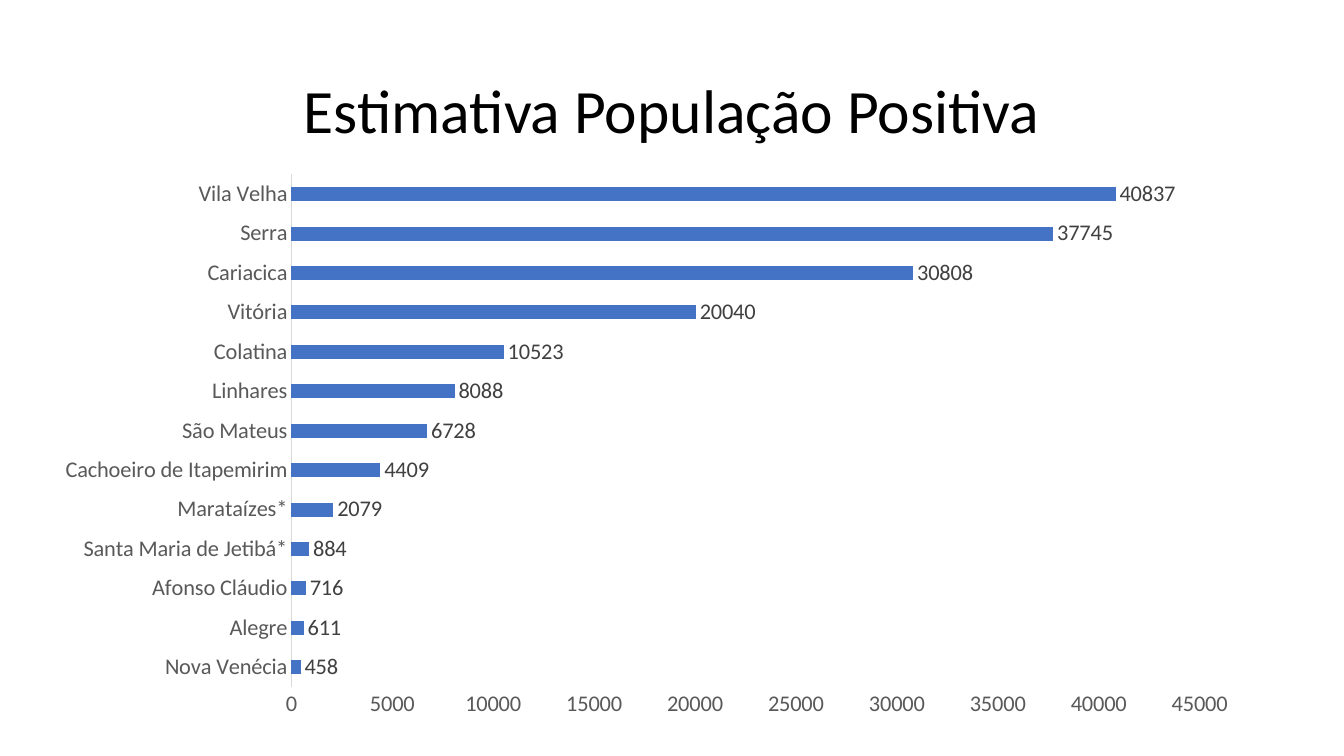
from dataclasses import dataclass

from pptx import Presentation
from pptx import util as u
from pptx.chart import data
from pptx.dml import color
from pptx.enum import chart as ch, text


@dataclass(frozen=True)
class Theme:
    """Colours, font and type sizes of the slide."""
    font: str = "Calibri"
    title: str = "000000"
    bar: str = "4472C4"
    axis: str = "595959"
    label: str = "404040"
    line: str = "D9D9D9"
    title_size: int = 44
    chart_size: int = 16


THEME = Theme()

ESTIMATES = {
    "Nova Venécia": 458,
    "Alegre": 611,
    "Afonso Cláudio": 716,
    "Santa Maria de Jetibá*": 884,
    "Marataízes*": 2079,
    "Cachoeiro de Itapemirim": 4409,
    "São Mateus": 6728,
    "Linhares": 8088,
    "Colatina": 10523,
    "Vitória": 20040,
    "Cariacica": 30808,
    "Serra": 37745,
    "Vila Velha": 40837,
}


def rgb(value):
    """Return a colour from its hex value."""
    return color.RGBColor.from_string(value)


def set_font(font, size, value):
    """Apply the theme font with a size and a colour."""
    font.name = THEME.font
    font.size = u.Pt(size)
    font.bold = False
    font.color.rgb = rgb(value)


def add_title(s, box, title):
    """Fill the title placeholder and place it in the box."""
    sp = s.shapes.title
    sp.left, sp.top, sp.width, sp.height = map(u.Pt, box)
    tf = sp.text_frame
    tf.text = title
    tf.word_wrap = True
    tf.vertical_anchor = text.MSO_ANCHOR.MIDDLE
    p = tf.paragraphs[0]
    p.alignment = text.PP_ALIGN.CENTER
    p.line_spacing = 0.9
    set_font(p.font, THEME.title_size, THEME.title)


def format_axis(axis):
    """Strip gridlines and ticks from an axis and style its labels."""
    axis.has_major_gridlines = False
    axis.major_tick_mark = axis.minor_tick_mark = ch.XL_TICK_MARK.NONE
    set_font(axis.tick_labels.font, THEME.chart_size, THEME.axis)


def add_bars(s, box, estimates):
    """Draw the labelled bar chart of estimates in the box."""
    cd = data.CategoryChartData(number_format="0")
    cd.categories = list(estimates)
    cd.add_series("Series 1", list(estimates.values()))
    chart = s.shapes.add_chart(
        ch.XL_CHART_TYPE.BAR_CLUSTERED, *map(u.Pt, box), cd).chart
    chart.has_title = chart.has_legend = False
    set_font(chart.font, THEME.chart_size, THEME.axis)

    cities, values = chart.category_axis, chart.value_axis
    format_axis(cities)
    format_axis(values)
    cities.format.line.color.rgb = rgb(THEME.line)
    cities.format.line.width = u.Pt(0.75)
    values.format.line.fill.background()
    values.minimum_scale, values.maximum_scale = 0, 45000
    values.major_unit = 5000
    values.tick_labels.number_format = "0"
    values.tick_labels.number_format_is_linked = False

    plot = chart.plots[0]
    plot.gap_width = 182
    plot.vary_by_categories = False
    bars = plot.series[0]
    bars.format.fill.solid()
    bars.format.fill.fore_color.rgb = rgb(THEME.bar)
    labels = bars.data_labels
    labels.show_value = True
    labels.number_format = "0"
    labels.number_format_is_linked = False
    labels.position = ch.XL_LABEL_POSITION.OUTSIDE_END
    set_font(labels.font, THEME.chart_size, THEME.label)


def main():
    """Build the slide and save it."""
    prs = Presentation()
    prs.slide_width, prs.slide_height = u.Pt(960), u.Pt(540)
    s = prs.slides.add_slide(prs.slide_layouts[5])
    add_title(s, (66, 28.75, 828, 104.4), "Estimativa População Positiva")
    add_bars(s, (29.5, 116.6, 864.7, 404.6), ESTIMATES)
    prs.save("out.pptx")


if __name__ == "__main__":
    main()
